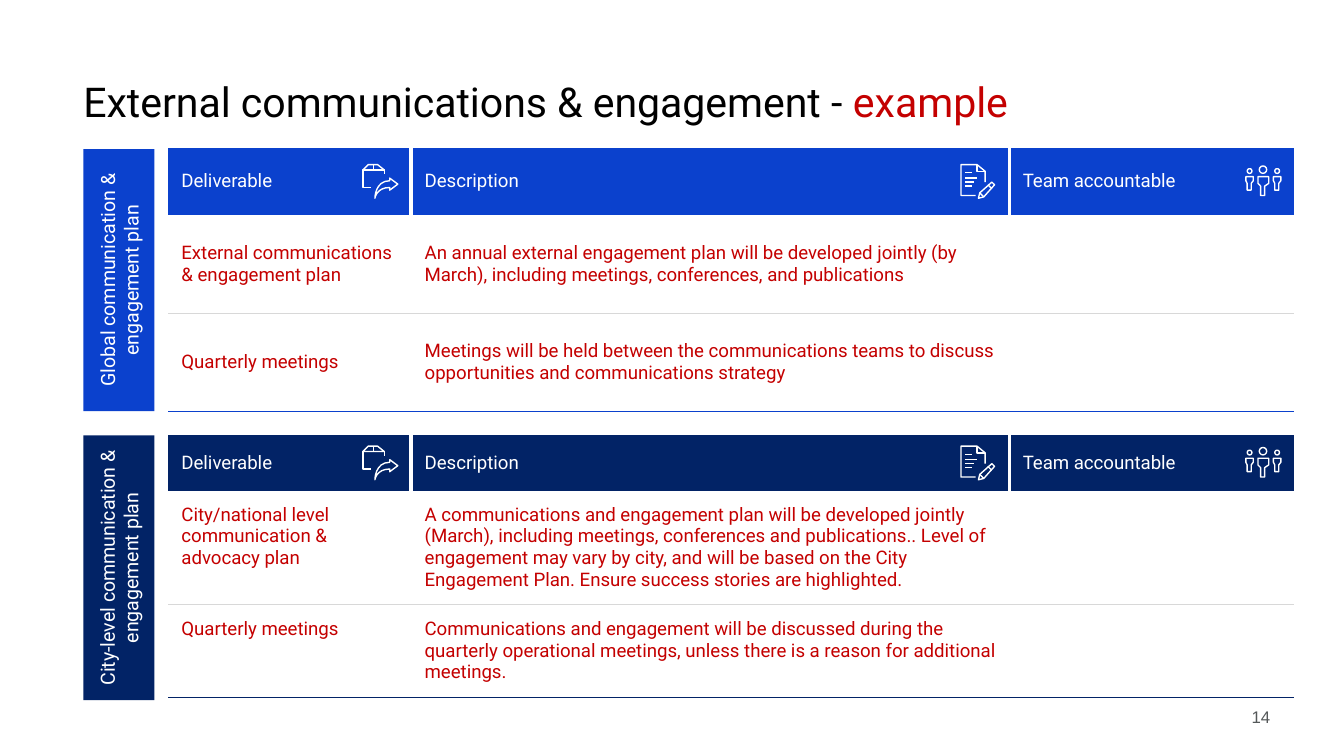
from lxml import etree
from pptx import Presentation
from pptx.dml.color import RGBColor
from pptx.enum.shapes import MSO_CONNECTOR as Connector, MSO_SHAPE as Shape
from pptx.enum.text import MSO_ANCHOR as Anchor, PP_ALIGN as Align
from pptx.oxml import parse_xml
from pptx.oxml.ns import nsdecls, qn
from pptx.util import Inches, Pt

BLUE, NAVY, RED, WHITE, GREY = "0B41CD", "022366", "C40000", "FFFFFF", "D8D8D8"
PLAIN_TABLE_STYLE = "{2D5ABB26-0587-4C30-8999-92F81FD0307C}"
COLUMN_WIDTHS = [1.81, 4.45, 2.12]
HEADINGS = ["Deliverable", "Description", "Team accountable"]
ICON_INSET, ICON_HEIGHT = 0.36, 0.25

GLOBAL_ROWS = [
    ["External communications & engagement plan",
     "An annual external engagement plan will be developed jointly (by March), "
     "including meetings, conferences, and publications", ""],
    ["Quarterly meetings",
     "Meetings will be held between the communications teams to discuss "
     "opportunities and communications strategy", ""],
]
CITY_ROWS = [
    ["City/national level communication & advocacy plan",
     "A communications and engagement plan will be developed jointly (March), "
     "including meetings, conferences and publications.. Level of engagement may "
     "vary by city, and will be based on the City Engagement Plan. Ensure success "
     "stories are highlighted.", ""],
    ["Quarterly meetings",
     "Communications and engagement will be discussed during the quarterly "
     "operational meetings, unless there is a reason for additional meetings.", ""],
]


def curve(start, control_1, control_2, end, steps=8):
    """Points along a cubic Bezier curve."""
    points = []
    for step in range(steps + 1):
        t = step / steps
        weights = ((1 - t) ** 3, 3 * t * (1 - t) ** 2, 3 * t * t * (1 - t), t ** 3)
        corners = (start, control_1, control_2, end)
        points.append(tuple(sum(w * c[axis] for w, c in zip(weights, corners))
                            for axis in (0, 1)))
    return points


# Icon parts in hundredths of an inch from the icon's top left corner.
SHARE_ARROW = (curve((20, 17), (10, 17), (9, 25), (9, 25))
               + curve((9, 25), (9, 25), (9, 12), (20, 12))
               + [(20, 10), (26, 14.5), (20, 19)])
SIDE_BODY = [(0, 9), (0, 12), (1, 14), (1, 19), (4, 19), (4, 14), (5.5, 12), (5.5, 9)]
MIDDLE_BODY = [(9, 9), (17, 9), (17, 14), (14, 16), (14, 23), (11, 23), (11, 16), (9, 14)]
PACKAGE = {
    "open": [[(6, 17), (0, 17), (0, 4), (16, 4), (16, 7)], [(8, 0), (8, 4)]],
    "closed": [[(16, 4), (0, 4), (4, 0), (11, 0)], SHARE_ARROW],
}
DOCUMENT = {
    "open": [[(3, y), (end, y)] for y, end in ((6, 8), (10, 12), (13, 10), (16, 8))]
    + [[(20, 15), (23, 18)], [(14, 21), (17, 24)],
       [(11, 23), (0, 23), (0, 0), (12, 0), (18, 5), (18, 13)],
       [(12, 0), (12, 5), (18, 5)]],
    "closed": [[(17, 24), (13, 25), (14, 21), (23, 13), (25, 15)]],
}
TEAM = {
    "closed": [SIDE_BODY, [(x + 20.5, y) for x, y in SIDE_BODY], MIDDLE_BODY],
    "heads": [(1, 3, 3.5), (21.5, 3, 3.5), (10, 1, 5.5)],
}


def rgb(hex_colour):
    return RGBColor.from_string(hex_colour)


def write(frame, runs, size=10, colour=WHITE, font="Roboto", align=Align.LEFT):
    """Fill a text frame with one paragraph of (text, colour) runs or plain text."""
    frame.word_wrap = True
    paragraph = frame.paragraphs[0]
    paragraph.alignment = align
    for text, run_colour in [(runs, colour)] if isinstance(runs, str) else runs:
        run = paragraph.add_run()
        run.text = text
        run.font.name, run.font.size = font, Pt(size)
        run.font.color.rgb = rgb(run_colour)


def set_insets(owner, left=0.1, top=0.1, right=0.1, bottom=0.1):
    owner.margin_left, owner.margin_top = Inches(left), Inches(top)
    owner.margin_right, owner.margin_bottom = Inches(right), Inches(bottom)


def set_borders(cell, **sides):
    """Draw borders given as side=(colour, points), sides being L, R, T and B."""
    properties = cell._tc.get_or_add_tcPr()
    borders = [
        parse_xml(f'<a:ln{side} {nsdecls("a")} w="{Pt(sides[side][1])}"><a:solidFill>'
                  f'<a:srgbClr val="{sides[side][0]}"/></a:solidFill></a:ln{side}>')
        for side in "LRTB" if side in sides]
    for position, border in enumerate(borders):
        properties.insert(position, border)


def add_title(slide, left, top, width, height):
    title = slide.shapes.title
    title.left, title.top = Inches(left), Inches(top)
    title.width, title.height = Inches(width), Inches(height)
    frame = title.text_frame
    frame.vertical_anchor = Anchor.TOP
    set_insets(frame, left=0)
    write(frame, [("External communications & engagement -", "000000"),
                  (" example", RED)], size=22)


def add_page_number(slide, left, top, width, height):
    box = slide.shapes.add_textbox(*map(Inches, (left, top, width, height)))
    set_insets(box.text_frame, top=0.05, bottom=0.05)
    write(box.text_frame, "14", size=9, colour="545859", font="Arial", align=Align.RIGHT)


def add_side_label(slide, label, colour, left, top, width, height):
    """Add a bar that fills the box and reads upwards."""
    shift = (height - width) / 2
    bar = slide.shapes.add_shape(Shape.RECTANGLE, Inches(left - shift),
                                 Inches(top + shift), Inches(height), Inches(width))
    bar.rotation = 270
    bar.shadow.inherit = False
    bar.fill.solid()
    bar.fill.fore_color.rgb = rgb(colour)
    bar.line.fill.background()
    bar.text_frame.vertical_anchor = Anchor.MIDDLE
    set_insets(bar.text_frame)
    write(bar.text_frame, label, size=10.5, align=Align.CENTER)


def add_icon(slide, icon, left, top):
    parts = slide.shapes.add_group_shape().shapes

    def place(point):
        return Inches(left + point[0] / 100), Inches(top + point[1] / 100)

    outlines = []
    for kind in ("open", "closed"):
        for points in icon.get(kind, []):
            start, *others = map(place, points)
            if len(points) == 2:
                stroke = parts.add_connector(Connector.STRAIGHT, *start, *others[0])
                etree.SubElement(stroke._element.spPr, qn("a:effectLst"))
                stroke.line.color.rgb, stroke.line.width = rgb(WHITE), Pt(0.75)
            else:
                builder = parts.build_freeform(*start)
                builder.add_line_segments(others, close=kind == "closed")
                outlines.append(builder.convert_to_shape())
    for x, y, diameter in icon.get("heads", []):
        outlines.append(parts.add_shape(Shape.OVAL, *place((x, y)),
                                        *[Inches(diameter / 100)] * 2))
    for outline in outlines:
        outline.shadow.inherit = False
        outline.fill.background()
        outline.line.color.rgb, outline.line.width = rgb(WHITE), Pt(0.75)


def add_plan(slide, rows, colour, left, top, row_heights, body_anchor):
    """Add a plan table with an icon in each heading."""
    table = slide.shapes.add_table(
        len(row_heights), len(COLUMN_WIDTHS), Inches(left), Inches(top),
        Inches(sum(COLUMN_WIDTHS)), Inches(sum(row_heights))).table
    table.first_row = table.horz_banding = False
    table._tbl.tblPr.find(qn("a:tableStyleId")).text = PLAIN_TABLE_STYLE
    for column, width in zip(table.columns, COLUMN_WIDTHS):
        column.width = Inches(width)
    for row, height in zip(table.rows, row_heights):
        row.height = Inches(height)

    for r, texts in enumerate([HEADINGS] + rows):
        for c, text in enumerate(texts):
            cell = table.cell(r, c)
            set_insets(cell)
            if r == 0:
                cell.vertical_anchor = Anchor.MIDDLE
                cell.fill.solid()
                cell.fill.fore_color.rgb = rgb(colour)
                gaps = {"L": c > 0, "R": c < len(texts) - 1}
                set_borders(cell, **{side: (WHITE, 2.25) for side in gaps if gaps[side]})
            else:
                cell.vertical_anchor = body_anchor
                cell.fill.background()
                borders = {"B": (colour if r == len(rows) else GREY, 0.75)}
                if r > 1:
                    borders["T"] = (GREY, 0.75)
                set_borders(cell, **borders)
            if text:
                write(cell.text_frame, text, colour=RED if r else WHITE)

    icon_top = top + (row_heights[0] - ICON_HEIGHT) / 2
    for c, icon in enumerate([PACKAGE, DOCUMENT, TEAM]):
        add_icon(slide, icon, left + sum(COLUMN_WIDTHS[:c + 1]) - ICON_INSET, icon_top)


def main():
    deck = Presentation()
    deck.slide_width = Inches(10)
    deck.slide_height = deck.slide_width * 9 // 16
    slide = deck.slides.add_slide(deck.slide_layouts[5])
    add_title(slide, 0.62, 0.47, 8.13, 0.63)
    add_side_label(slide, "Global communication & engagement plan", BLUE,
                   0.62, 1.11, 0.53, 1.95)
    add_plan(slide, GLOBAL_ROWS, BLUE, 1.25, 1.1, [0.5, 0.73, 0.73], Anchor.MIDDLE)
    add_side_label(slide, "City-level communication & engagement plan", NAVY,
                   0.62, 3.24, 0.53, 1.97)
    add_plan(slide, CITY_ROWS, NAVY, 1.25, 3.24, [0.41, 0.85, 0.69], Anchor.TOP)
    add_page_number(slide, 9.02, 5.21, 0.53, 0.18)
    deck.save("out.pptx")


if __name__ == "__main__":
    main()
